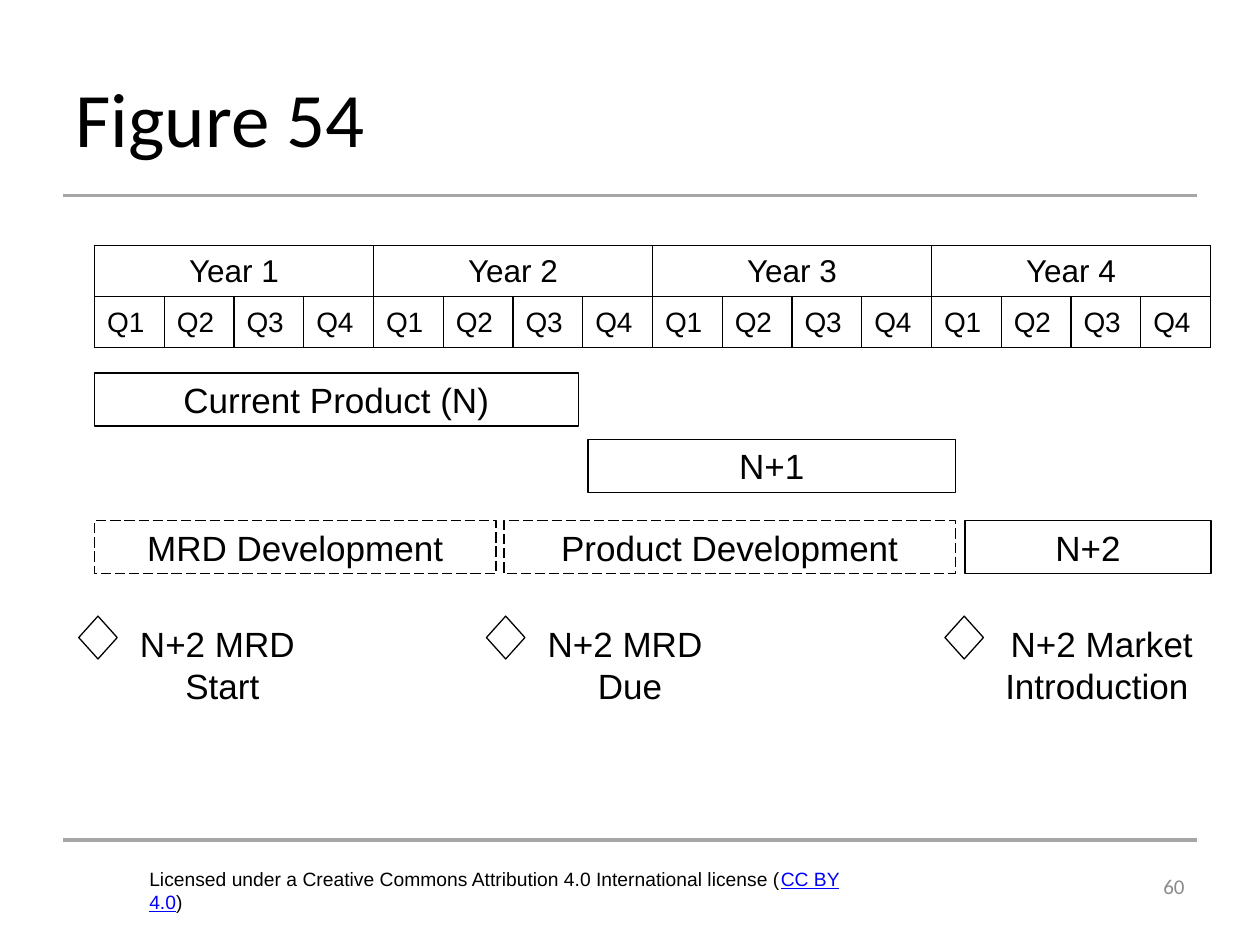
from lxml import etree
from pptx import Presentation
from pptx.dml.color import RGBColor
from pptx.enum.dml import MSO_LINE
from pptx.enum.shapes import MSO_CONNECTOR, MSO_SHAPE
from pptx.enum.text import MSO_ANCHOR, PP_ALIGN
from pptx.oxml.ns import qn
from pptx.util import Pt

RECTANGLE, DIAMOND = MSO_SHAPE.RECTANGLE, MSO_SHAPE.DIAMOND
STRAIGHT = MSO_CONNECTOR.STRAIGHT
DASH = MSO_LINE.LONG_DASH
LEFT, CENTER, RIGHT = PP_ALIGN.LEFT, PP_ALIGN.CENTER, PP_ALIGN.RIGHT
TOP, MIDDLE = MSO_ANCHOR.TOP, MSO_ANCHOR.MIDDLE

BLACK = RGBColor(0x00, 0x00, 0x00)
RULE_GRAY = RGBColor(0xA6, 0xA6, 0xA6)
NUMBER_GRAY = RGBColor(0x8C, 0x8C, 0x8C)
LINK_BLUE = RGBColor(0x00, 0x00, 0xFF)

LINE_WIDTH = 0.75
YEARS, QUARTERS = 4, 4
TABLE_LEFT, TABLE_TOP = 54, 140.4
COLUMN_WIDTH, ROW_HEIGHT = 39.87, 29.2
BAR_HEIGHT = 30.3
MILESTONE_TOP = 352.1

# text, left, top, width, dashed
BARS = [
    ("Current Product (N)", 54, 213.2, 276.5, False),
    ("N+1", 336, 251, 210, False),
    ("MRD Development", 54, 297.6, 229.5, True),
    ("Product Development", 288, 297.6, 258, True),
    ("N+2", 551.5, 297.6, 140.5, False),
]
# diamond left, text left, text width, paragraphs
MILESTONES = [
    (45, 69.8, 114.5, ["N+2 MRD ", "Start"]),
    (278, 302.7, 114.5, ["N+2 MRD ", "Due"]),
    (540, 562.3, 134.6, ["N+2 Market Introduction "]),
]


def format_paragraph(paragraph, size, color=BLACK, alignment=LEFT, name="Arial"):
    paragraph.alignment = alignment
    paragraph.font.size = Pt(size)
    paragraph.font.name = name
    paragraph.font.color.rgb = color


def set_title(slide, text):
    title = slide.shapes.title
    title.left, title.top, title.width, title.height = Pt(36), Pt(21.6), Pt(648), Pt(90)
    title.text_frame.text = text
    title.text_frame.vertical_anchor = MIDDLE
    format_paragraph(title.text_frame.paragraphs[0], 44, name="Calibri")


def add_rule(slide, top):
    rule = slide.shapes.add_connector(STRAIGHT, Pt(36), Pt(top), Pt(684), Pt(top))
    rule.line.color.rgb = RULE_GRAY
    rule.line.width = Pt(1.75)
    etree.SubElement(rule._element.spPr, qn("a:effectLst"))


def add_text(slide, left, top, width, height, anchor=TOP):
    frame = slide.shapes.add_textbox(Pt(left), Pt(top), Pt(width), Pt(height)).text_frame
    frame.word_wrap = True
    frame.vertical_anchor = anchor
    return frame


def add_outline(slide, kind, left, top, width, height):
    shape = slide.shapes.add_shape(kind, Pt(left), Pt(top), Pt(width), Pt(height))
    shape.shadow.inherit = False
    shape.fill.background()
    shape.line.color.rgb = BLACK
    shape.line.width = Pt(LINE_WIDTH)
    return shape


def add_bar(slide, text, left, top, width, dashed):
    bar = add_outline(slide, RECTANGLE, left, top, width, BAR_HEIGHT)
    if dashed:
        bar.line.dash_style = DASH
    bar.text_frame.text = text
    bar.text_frame.vertical_anchor = MIDDLE
    format_paragraph(bar.text_frame.paragraphs[0], 20, alignment=CENTER)


def add_milestone(slide, diamond_left, text_left, width, lines):
    add_outline(slide, DIAMOND, diamond_left, MILESTONE_TOP, 22, 24.5)
    frame = add_text(slide, text_left, MILESTONE_TOP, width, 55.7)
    frame.text = "\n".join(lines)
    for paragraph in frame.paragraphs:
        format_paragraph(paragraph, 20, alignment=CENTER)


def set_borders(cell):
    properties = cell._tc.get_or_add_tcPr()
    for side in ("lnL", "lnR", "lnT", "lnB"):
        line = etree.SubElement(properties, qn(f"a:{side}"), w=str(Pt(LINE_WIDTH)))
        fill = etree.SubElement(line, qn("a:solidFill"))
        etree.SubElement(fill, qn("a:srgbClr"), val=str(BLACK))


def fill_cell(cell, text, size, alignment):
    cell.text = text
    cell.vertical_anchor = MIDDLE
    format_paragraph(cell.text_frame.paragraphs[0], size, alignment=alignment)


def add_timeline(slide):
    count = YEARS * QUARTERS
    table = slide.shapes.add_table(
        2, count, Pt(TABLE_LEFT), Pt(TABLE_TOP),
        Pt(count * COLUMN_WIDTH), Pt(2 * ROW_HEIGHT)).table
    table.first_row = table.horz_banding = False
    for column in table.columns:
        column.width = Pt(COLUMN_WIDTH)
    for row in table.rows:
        row.height = Pt(ROW_HEIGHT)
    for cell in table.iter_cells():
        set_borders(cell)
        cell.fill.background()
    for index in range(count):
        year, quarter = divmod(index, QUARTERS)
        if quarter == 0:
            year_cell = table.cell(0, index)
            year_cell.merge(table.cell(0, index + QUARTERS - 1))
            fill_cell(year_cell, f"Year {year + 1}", 18, CENTER)
        fill_cell(table.cell(1, index), f"Q{quarter + 1}", 16, LEFT)


def add_license(slide):
    paragraph = add_text(slide, 78.2, 491.8, 430.6, 21).paragraphs[0]
    format_paragraph(paragraph, 11)
    paragraph.add_run().text = (
        "Licensed under a Creative Commons Attribution 4.0 International license (")
    link = paragraph.add_run()
    link.text = "CC BY 4.0"
    link.font.color.rgb = LINK_BLUE
    link.font.underline = True
    paragraph.add_run().text = ")"


def add_page_number(slide, number):
    frame = add_text(slide, 552, 491.8, 132, 28.8, MIDDLE)
    frame.text = number
    format_paragraph(frame.paragraphs[0], 12, NUMBER_GRAY, RIGHT, "Calibri")


def main():
    presentation = Presentation()
    presentation.slide_width, presentation.slide_height = Pt(720), Pt(540)
    slide = presentation.slides.add_slide(presentation.slide_layouts[5])
    set_title(slide, "Figure 54")
    for top in (111.6, 480):
        add_rule(slide, top)
    add_timeline(slide)
    for bar in BARS:
        add_bar(slide, *bar)
    for milestone in MILESTONES:
        add_milestone(slide, *milestone)
    add_license(slide)
    add_page_number(slide, "60")
    presentation.save("out.pptx")


if __name__ == "__main__":
    main()
